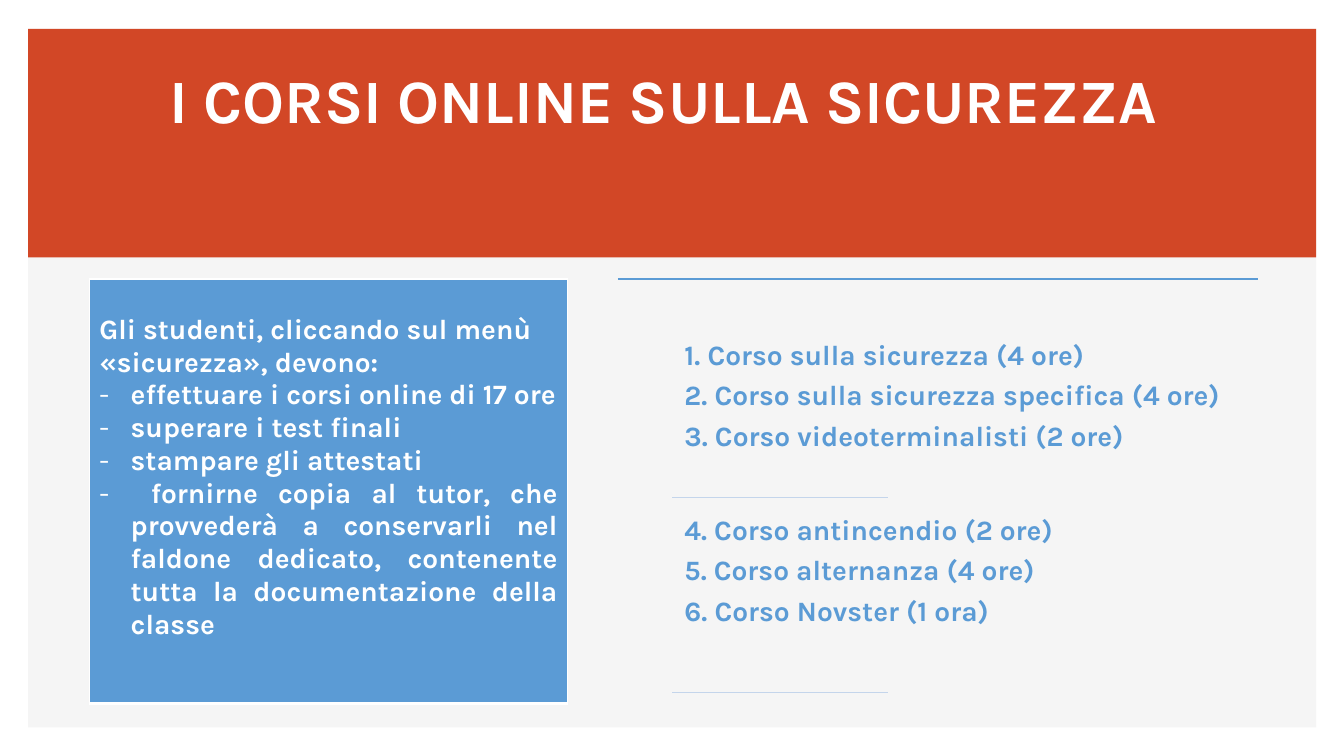
from lxml import etree
from pptx import Presentation
from pptx.dml.color import RGBColor
from pptx.enum.shapes import MSO_CONNECTOR, MSO_SHAPE
from pptx.enum.text import MSO_ANCHOR, MSO_AUTO_SIZE, PP_ALIGN
from pptx.oxml.ns import qn
from pptx.util import Cm, Pt

RECT = MSO_SHAPE.RECTANGLE
STRAIGHT = MSO_CONNECTOR.STRAIGHT
BOTTOM = MSO_ANCHOR.BOTTOM
NO_FIT = MSO_AUTO_SIZE.NONE
LEFT, CENTER, JUSTIFY = PP_ALIGN.LEFT, PP_ALIGN.CENTER, PP_ALIGN.JUSTIFY

WHITE = RGBColor(0xFF, 0xFF, 0xFF)
GREY = RGBColor(0xF5, 0xF5, 0xF5)
RED = RGBColor(0xD2, 0x47, 0x26)
BLUE = RGBColor(0x5B, 0x9B, 0xD5)
PALE = RGBColor(0xC4, 0xD5, 0xEB)

INTRO = "Gli studenti, cliccando sul menù «sicurezza», devono:"
TASKS = [
    "effettuare i corsi online di 17 ore",
    "superare i test finali",
    "stampare gli attestati",
    " fornirne copia al tutor, che provvederà a conservarli nel faldone "
    "dedicato, contenente tutta la documentazione della classe",
]
BASIC = [
    "1. Corso sulla sicurezza (4 ore)",
    "2. Corso sulla sicurezza specifica (4 ore)",
    "3. Corso videoterminalisti (2 ore)",
]
EXTRA = [
    "4. Corso antincendio (2 ore)",
    "5. Corso alternanza (4 ore)",
    "6. Corso Novster (1 ora)",
]


class Page:
    """Holds the text style and the slide being built."""

    font = "Karla"
    size = 20

    def __init__(self, deck):
        self.slide = deck.slides.add_slide(deck.slide_layouts[5])
        self.shapes = self.slide.shapes

    def style(self, para, color, size=None):
        for run in para.runs:
            run.font.name = self.font
            run.font.size = Pt(size or self.size)
            run.font.bold = True
            run.font.color.rgb = color

    def band(self, x, y, w, h, color):
        box = self.shapes.add_shape(RECT, Cm(x), Cm(y), Cm(w), Cm(h))
        box.shadow.inherit = False
        box.fill.solid()
        box.fill.fore_color.rgb = color
        box.line.fill.background()

    def title(self, text, x, y, w, h):
        head = self.shapes.title
        head.left, head.top, head.width, head.height = Cm(x), Cm(y), Cm(w), Cm(h)
        frame = head.text_frame
        frame.text = text
        frame.word_wrap = True
        frame.auto_size = NO_FIT
        frame.vertical_anchor = BOTTOM
        para = frame.paragraphs[0]
        para.alignment = CENTER
        self.style(para, WHITE, 44)
        self.shapes._spTree.append(head._element)

    def rule(self, x, y, w, color):
        line = self.shapes.add_connector(STRAIGHT, Cm(x), Cm(y), Cm(x + w), Cm(y))
        line.line.color.rgb = color
        line.line.width = Pt(1)
        etree.SubElement(line._element.spPr, qn("a:effectLst"))

    def text(self, rows, x, y, w, h, top=0.2):
        box = self.shapes.add_textbox(Cm(x), Cm(y), Cm(w), Cm(h))
        frame = box.text_frame
        frame.word_wrap = True
        frame.margin_left = frame.margin_right = frame.margin_bottom = Cm(0.2)
        frame.margin_top = Cm(top)
        frame.text = "\n".join(rows)
        for para in frame.paragraphs:
            para.line_spacing = 0.9
            para.space_after = Pt(7.5)
            self.style(para, BLUE)

    def dash(self, para):
        """Give a paragraph a hanging dash."""
        props = para._p.get_or_add_pPr()
        props.set("marL", str(Cm(0.79)))
        props.set("indent", str(-Cm(0.79)))
        etree.SubElement(props, qn("a:buFont"), typeface=self.font)
        etree.SubElement(props, qn("a:buChar"), char="-")

    def edge(self, cell):
        """Draw white cell borders, thicker at the bottom."""
        props = cell._tc.get_or_add_tcPr()
        for spot, (side, width) in enumerate(zip("LRTB", (1, 1, 1, 3))):
            line = etree.Element(qn(f"a:ln{side}"), w=str(Pt(width)))
            fill = etree.SubElement(line, qn("a:solidFill"))
            etree.SubElement(fill, qn("a:srgbClr"), val=str(WHITE))
            props.insert(spot, line)

    def card(self, intro, tasks, x, y, w, h):
        table = self.shapes.add_table(1, 1, Cm(x), Cm(y), Cm(w), Cm(h)).table
        table.first_row = table.horz_banding = False
        cell = table.cell(0, 0)
        cell.fill.solid()
        cell.fill.fore_color.rgb = BLUE
        cell.margin_top = Cm(0.87)
        self.edge(cell)
        cell.text_frame.text = "\n".join([intro, *tasks])
        paras = cell.text_frame.paragraphs
        for para in paras:
            para.alignment = LEFT
            self.style(para, WHITE)
        for para in paras[1:]:
            self.dash(para)
        paras[-1].alignment = JUSTIFY


def main():
    deck = Presentation()
    deck.slide_width, deck.slide_height = Cm(33.87), Cm(19.05)
    page = Page(deck)
    page.band(0.71, 0.73, 32.46, 17.6, GREY)
    page.band(0.71, 0.73, 32.46, 5.76, RED)
    page.title("I CORSI ONLINE SULLA SICUREZZA", 1.45, 1.2, 30.55, 2.35)
    page.card(INTRO, TASKS, 2.25, 7.03, 12.06, 10.7)
    page.rule(15.57, 7.03, 16.13, BLUE)
    page.text(BASIC, 17.05, 7.29, 14.65, 5.25, top=1.3)
    page.text(EXTRA, 17.05, 12.8, 11.7, 4.65)
    for y in (12.54, 17.45):
        page.rule(16.94, y, 5.44, PALE)
    deck.save("out.pptx")


if __name__ == "__main__":
    main()
